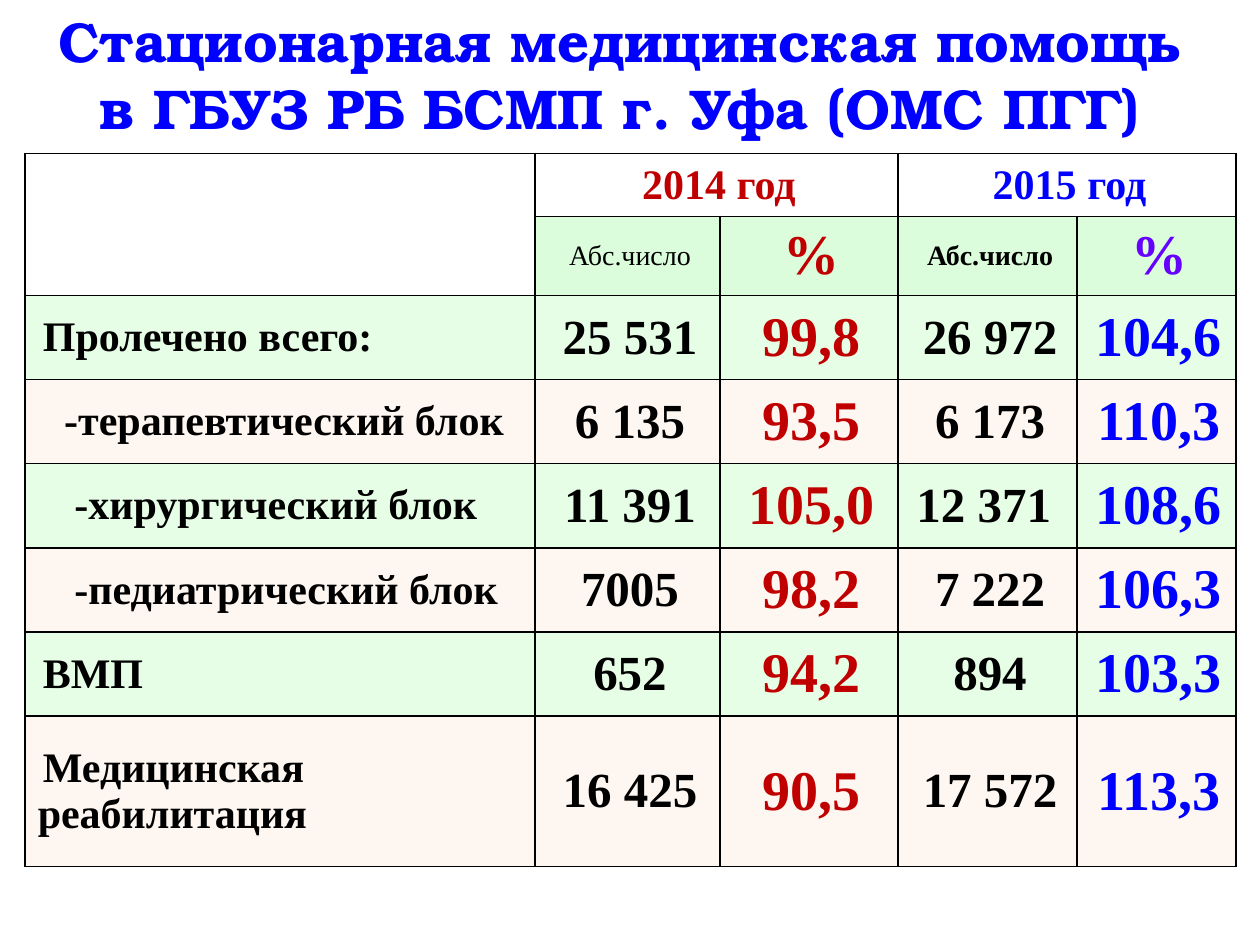
from lxml import etree
from pptx import Presentation
from pptx.dml.color import RGBColor
from pptx.enum import text as t
from pptx.oxml import ns
from pptx.util import Inches, Pt

BLACK = RGBColor(0, 0, 0)
WHITE = RGBColor(255, 255, 255)
BLUE = RGBColor(0, 0, 255)
RED = RGBColor(0xC0, 0, 0)
VIOLET = RGBColor(0x66, 0, 0xFF)
HEAD = RGBColor(0xDB, 0xFD, 0xDB)
GREEN = RGBColor(0xE6, 0xFE, 0xE6)
CREAM = RGBColor(0xFE, 0xF6, 0xF0)
SERIF = "Times New Roman"
BONUM = "TeX Gyre Bonum"
MID = t.PP_ALIGN.CENTER
LEFT = t.PP_ALIGN.LEFT

TITLE = ["Стационарная медицинская помощь", "в ГБУЗ РБ БСМП г. Уфа (ОМС ПГГ)"]
COLS = [4.04, 1.47, 1.41, 1.42, 1.26]
ROWS = [0.5, 0.63] + [0.67] * 5 + [1.2]
YEARS = [(1, "2014 год", RED), (3, "2015 год", BLUE)]
UNITS = [
    ("Абс.число", 16, BLACK, False),
    ("%", 32, RED, True),
    ("Абс.число", 16, BLACK, True),
    ("%", 32, VIOLET, True),
]
STYLES = [(28, BLACK), (32, RED), (28, BLACK), (32, BLUE)]
DATA = [
    ("Пролечено всего:", 0.04, "25 531", "99,8", "26 972", "104,6"),
    ("-терапевтический блок", 0.21, "6 135", "93,5", "6 173", "110,3"),
    ("-хирургический блок", 0.29, "11 391", "105,0", "12 371", "108,6"),
    ("-педиатрический блок", 0.29, "7005", "98,2", "7 222", "106,3"),
    ("ВМП", 0.04, "652", "94,2", "894", "103,3"),
    ("Медицинская реабилитация", 0.04, "16 425", "90,5", "17 572", "113,3"),
]


def write(frame, lines, size=24, color=BLACK, bold=True, font=SERIF, align=MID, indent=0.04):
    """Fill a text frame with formatted paragraphs."""
    frame.text = "\n".join(lines)
    for para in frame.paragraphs:
        para.alignment = align
        props = para._p.get_or_add_pPr()
        props.set("marL", "0")
        props.set("indent", str(Inches(indent)))
        for run in para.runs:
            face = run.font
            face.name, face.size, face.bold = font, Pt(size), bold
            face.color.rgb = color


def paint(cell, fill):
    """Give a cell its borders, fill and anchor."""
    props = cell._tc.get_or_add_tcPr()
    for side in ("a:lnL", "a:lnR", "a:lnT", "a:lnB"):
        line = etree.SubElement(props, ns.qn(side), w=str(Pt(1)))
        solid = etree.SubElement(line, ns.qn("a:solidFill"))
        etree.SubElement(solid, ns.qn("a:srgbClr"), val=str(BLACK))
    cell.fill.solid()
    cell.fill.fore_color.rgb = fill
    cell.vertical_anchor = t.MSO_ANCHOR.MIDDLE


def add_title(slide, x, y, w, h):
    """Place the slide title in its placeholder."""
    box = slide.shapes.title
    box.left, box.top, box.width, box.height = map(Inches, (x, y, w, h))
    frame = box.text_frame
    frame.word_wrap = True
    frame.auto_size = t.MSO_AUTO_SIZE.NONE
    frame.vertical_anchor = t.MSO_ANCHOR.TOP
    frame.margin_right = Inches(0.26)
    write(frame, TITLE, size=32, color=BLUE, font=BONUM, indent=0)


def add_grid(slide, x, y, w, h):
    """Place the table of treated patients by year."""
    shape = slide.shapes.add_table(len(ROWS), len(COLS), *map(Inches, (x, y, w, h)))
    grid = shape.table
    grid.first_row = grid.horz_banding = False
    for col, width in zip(grid.columns, COLS):
        col.width = Inches(width * w / sum(COLS))
    for row, height in zip(grid.rows, ROWS):
        row.height = Inches(height * h / sum(ROWS))
    for i in range(len(ROWS)):
        for j in range(len(COLS)):
            band = WHITE if i == 0 or (i == 1 and j == 0) else HEAD
            paint(grid.cell(i, j), band if i < 2 else (GREEN, CREAM)[i % 2])

    grid.cell(0, 0).merge(grid.cell(1, 0))
    for j, year, color in YEARS:
        grid.cell(0, j).merge(grid.cell(0, j + 1))
        write(grid.cell(0, j).text_frame, [year], color=color)
    for j, (unit, size, color, bold) in enumerate(UNITS, 1):
        write(grid.cell(1, j).text_frame, [unit], size=size, color=color, bold=bold)
    for i, (label, indent, *values) in enumerate(DATA, 2):
        write(grid.cell(i, 0).text_frame, [label], align=LEFT, indent=indent)
        for j, (value, (size, color)) in enumerate(zip(values, STYLES), 1):
            write(grid.cell(i, j).text_frame, [value], size=size, color=color)
    shift = grid.cell(4, 3)
    shift.margin_left, shift.margin_right = Inches(0.05), Inches(0.15)


def main():
    """Build and save the slide."""
    deck = Presentation()
    deck.slide_width, deck.slide_height = Inches(10), Inches(7.5)
    slide = deck.slides.add_slide(deck.slide_layouts[5])
    add_title(slide, 0, 0, 10, 1.18)
    add_grid(slide, 0.2, 1.22, 9.61, 5.66)
    deck.save("out.pptx")


if __name__ == "__main__":
    main()
